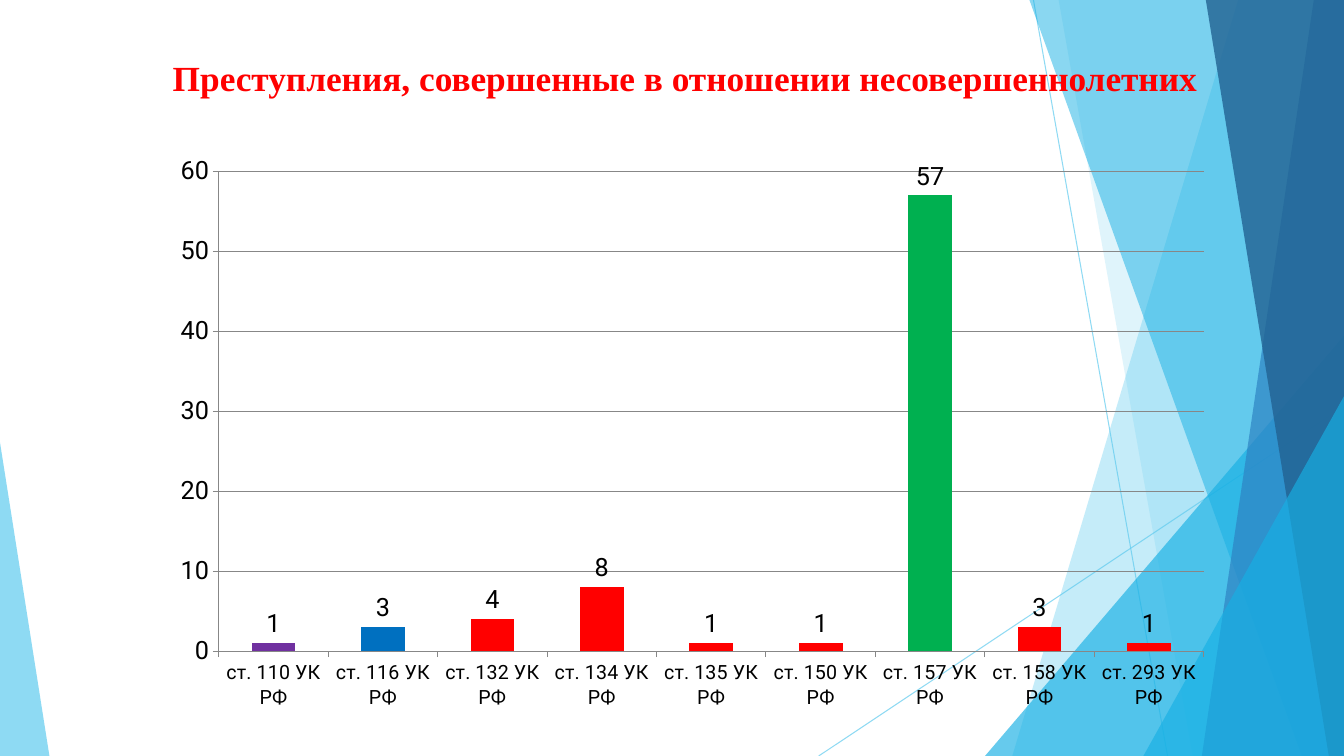
from lxml import etree
from pptx import Presentation
from pptx.chart.data import CategoryChartData
from pptx.dml.color import RGBColor
from pptx.enum.chart import XL_CHART_TYPE, XL_LABEL_POSITION, XL_TICK_MARK
from pptx.enum.shapes import MSO_CONNECTOR, MSO_SHAPE
from pptx.enum.text import MSO_ANCHOR, PP_ALIGN
from pptx.oxml import parse_xml
from pptx.oxml.ns import nsdecls, qn
from pptx.util import Inches, Pt

COLUMNS = XL_CHART_TYPE.COLUMN_CLUSTERED
OUTSIDE_END = XL_LABEL_POSITION.OUTSIDE_END
TICK_OUTSIDE = XL_TICK_MARK.OUTSIDE
STRAIGHT = MSO_CONNECTOR.STRAIGHT
TRIANGLE = MSO_SHAPE.ISOSCELES_TRIANGLE
MIDDLE = MSO_ANCHOR.TOP
CENTER = PP_ALIGN.CENTER

BLACK = RGBColor(0x00, 0x00, 0x00)
GRAY = RGBColor(0x87, 0x87, 0x87)
RED = RGBColor(0xFF, 0x00, 0x00)
PURPLE = RGBColor(0x70, 0x30, 0xA0)
BLUE = RGBColor(0x00, 0x70, 0xC0)
GREEN = RGBColor(0x00, 0xB0, 0x50)
SKY = RGBColor(0x5F, 0xCB, 0xEF)
CYAN = RGBColor(0x17, 0xB0, 0xE4)
STEEL = RGBColor(0x2E, 0x83, 0xC3)
NAVY = RGBColor(0x22, 0x62, 0x92)

WIDTH, HEIGHT = 13.33, 7.5
TITLE = "Преступления, совершенные в отношении несовершеннолетних"
CRIMES = {110: 1, 116: 3, 132: 4, 134: 8, 135: 1, 150: 1, 157: 57, 158: 3, 293: 1}
BAR_COLORS = {110: PURPLE, 116: BLUE, 157: GREEN}


def set_opacity(fill, percent):
    """Make a solid fill partly transparent."""
    color = fill._xPr.find(qn("a:solidFill"))[0]
    etree.SubElement(color, qn("a:alpha"), val=str(percent * 1000))


class SlideBuilder:
    title_font = "Times New Roman"
    chart_font = "Roboto"

    def __init__(self, page):
        self.page = page
        self.shapes = page.shapes

    def paint(self, shape, color, opacity):
        shape.shadow.inherit = False
        shape.fill.solid()
        shape.fill.fore_color.rgb = color
        set_opacity(shape.fill, opacity)
        shape.line.fill.background()

    def ray(self, start, end):
        line = self.shapes.add_connector(STRAIGHT, *map(Inches, start + end))
        line.line.color.rgb = SKY
        line.line.width = Pt(0.75)
        set_opacity(line.line.fill, 70)
        etree.SubElement(line._element.spPr, qn("a:effectLst"))

    def band(self, top_left, bottom_left, color, opacity):
        """Fill from a slanted left edge to the right side of the page."""
        outline = self.shapes.build_freeform(Inches(top_left), 0)
        corners = [(WIDTH, 0), (WIDTH, HEIGHT), (bottom_left, HEIGHT)]
        outline.add_line_segments([(Inches(x), Inches(y)) for x, y in corners])
        self.paint(outline.convert_to_shape(), color, opacity)

    def corner(self, left, top, width, apex, color, opacity):
        """Stand a right triangle on the bottom edge of the page."""
        box = map(Inches, (left, top, width, HEIGHT - top))
        shape = self.shapes.add_shape(TRIANGLE, *box)
        shape.adjustments[0] = apex
        self.paint(shape, color, opacity)

    def title(self, text):
        box = self.shapes.title
        box.left, box.top, box.width, box.height = map(Inches, (1.13, 0.48, 11.33, 0.96))
        frame = box.text_frame
        frame.text = text
        frame.word_wrap = True
        frame.vertical_anchor = MIDDLE
        frame.margin_top = Inches(0.08)
        para = frame.paragraphs[0]
        para.alignment = CENTER
        font = para.runs[0].font
        font.name, font.size, font.bold = self.title_font, Pt(25.2), True
        font.color.rgb = RED
        self.shapes._spTree.append(box._element)  # in front of the bands

    def column_chart(self, values, colors):
        data = CategoryChartData()
        data.categories = [f"ст. {article} УК РФ" for article in values]
        data.add_series("Series 1", values.values())
        box = map(Inches, (1.59, 1.45, 10.56, 5.7))
        chart = self.shapes.add_chart(COLUMNS, *box, data).chart
        chart.has_legend = chart.has_title = False
        chart.font.name, chart.font.size = self.chart_font, Pt(18)
        chart.font.color.rgb = BLACK

        plot = chart.plots[0]
        plot.gap_width = 150
        plot.vary_by_categories = False
        plot.has_data_labels = True
        plot.data_labels.show_value = True
        plot.data_labels.position = OUTSIDE_END
        series = plot.series[0]
        series.format.fill.solid()
        series.format.fill.fore_color.rgb = RED
        for index, article in enumerate(values):
            if article in colors:
                fill = series.points[index].format.fill
                fill.solid()
                fill.fore_color.rgb = colors[article]

        value_axis = chart.value_axis
        value_axis.minimum_scale, value_axis.maximum_scale = 0, 60
        value_axis.major_unit = 10
        value_axis.has_major_gridlines = True
        for axis in (chart.category_axis, value_axis):
            axis.major_tick_mark = TICK_OUTSIDE
        chart.category_axis.tick_labels.font.size = Pt(14)
        for part in (chart.category_axis, value_axis, value_axis.major_gridlines):
            part.format.line.color.rgb = GRAY
            part.format.line.width = Pt(0.75)
        self.place_plot(chart, x=0.055, y=0.044, w=0.925, h=0.835)

    def place_plot(self, chart, **fractions):
        """Fix the inner plot area as fractions of the chart frame."""
        sizes = "".join(f'<c:{key} val="{value}"/>' for key, value in fractions.items())
        layout = parse_xml(
            f'<c:layout {nsdecls("c")}><c:manualLayout><c:layoutTarget val="inner"/>'
            f'<c:xMode val="edge"/><c:yMode val="edge"/>{sizes}'
            "</c:manualLayout></c:layout>")
        area = chart._chartSpace.chart.plotArea
        for old in area.findall(qn("c:layout")):
            area.remove(old)
        area.insert(0, layout)


def main():
    deck = Presentation()
    deck.slide_width, deck.slide_height = Inches(WIDTH), Inches(HEIGHT)
    builder = SlideBuilder(deck.slides.add_slide(deck.slide_layouts[5]))
    builder.ray((10.25, 0), (11.58, HEIGHT))
    builder.ray((WIDTH, 4.03), (8.12, HEIGHT))
    builder.band(12.28, 10.04, SKY, 36)
    builder.band(10.5, 11.83, SKY, 20)
    builder.corner(9.77, 3.33, 3.56, 1, CYAN, 66)
    builder.band(10.21, 12.91, CYAN, 50)
    builder.band(13.03, 11.92, STEEL, 70)
    builder.band(11.96, 13.18, NAVY, 80)
    builder.corner(11.34, 3.93, 1.99, 1, CYAN, 66)
    builder.corner(0, 4.39, 0.49, 0, SKY, 70)
    builder.title(TITLE)
    builder.column_chart(CRIMES, BAR_COLORS)
    deck.save("out.pptx")


if __name__ == "__main__":
    main()
